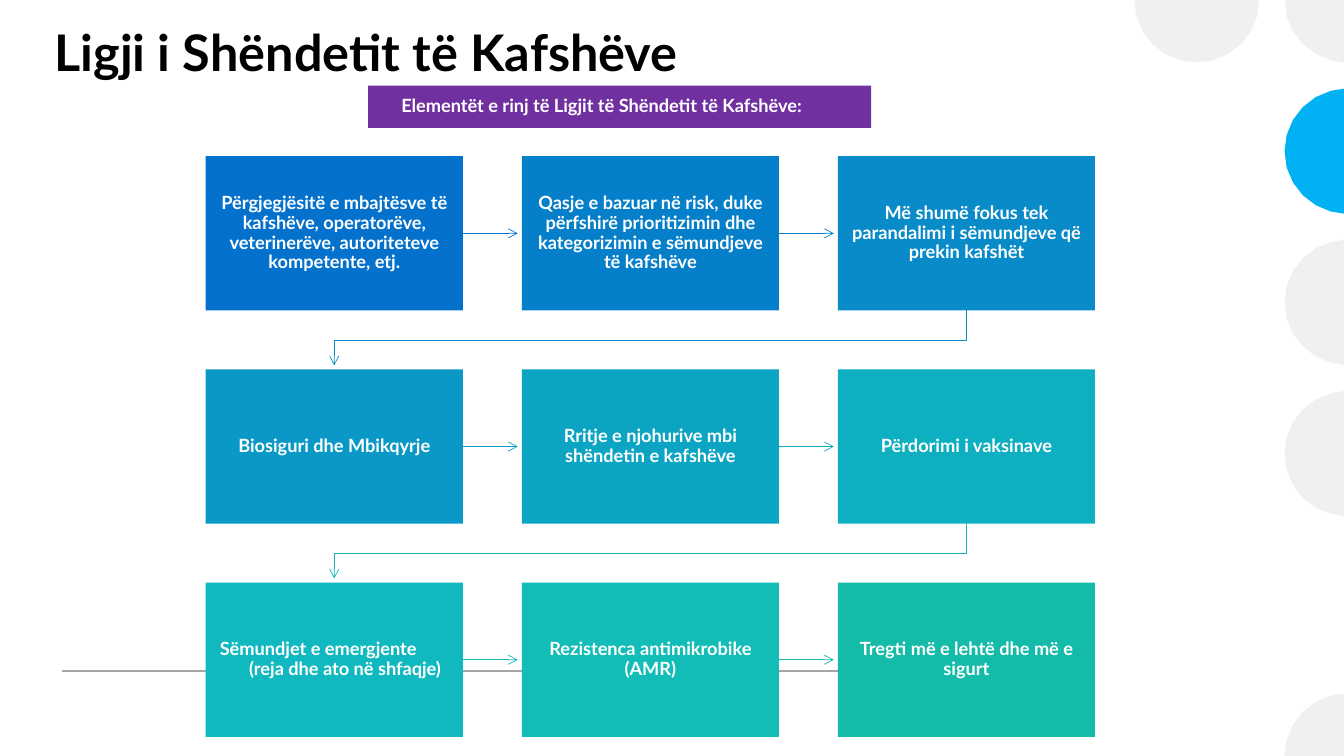
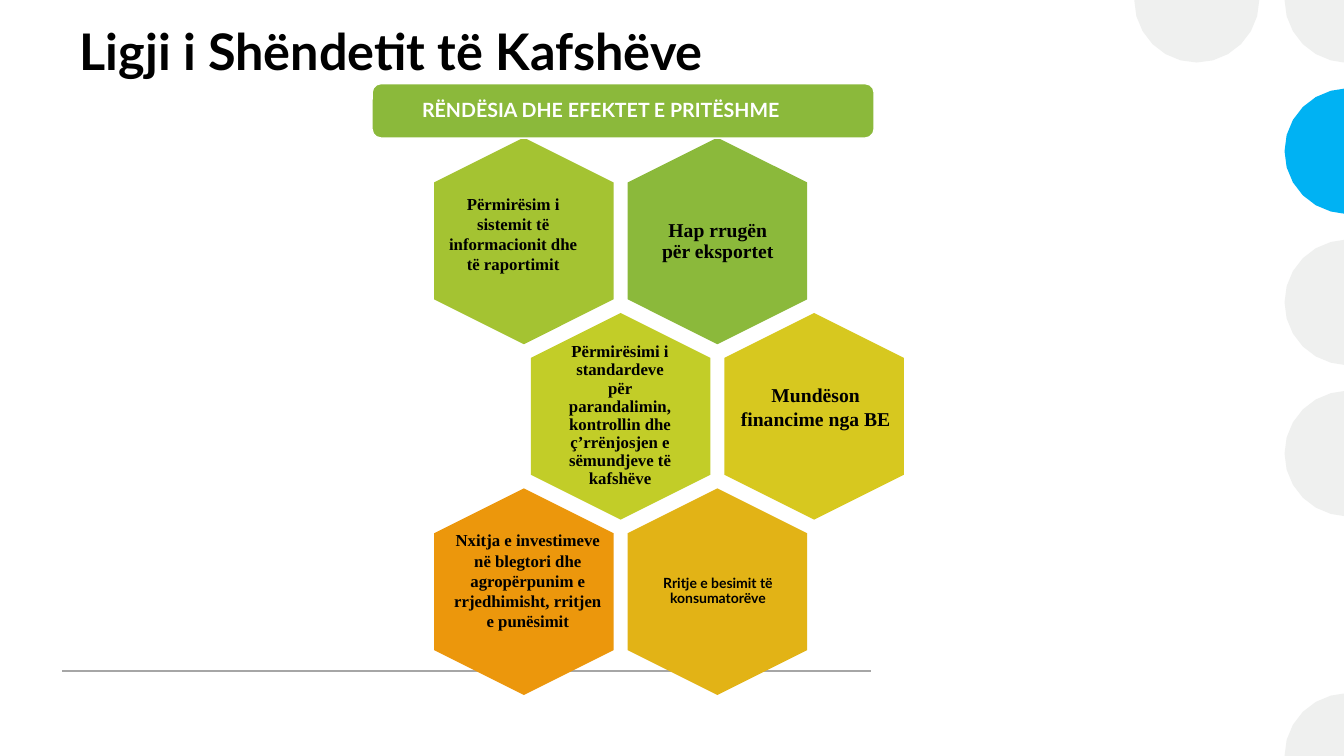
import math
from dataclasses import dataclass
from typing import Any

from lxml import etree
from pptx import Presentation
from pptx import util as u
from pptx.dml.color import RGBColor
from pptx.enum import shapes, text
from pptx.oxml.ns import qn

WHITE = RGBColor(0xFF, 0xFF, 0xFF)
BLACK = RGBColor(0x00, 0x00, 0x00)
GREY = RGBColor(0xEF, 0xF0, 0xEF)
SKY = RGBColor(0x00, 0xB2, 0xF3)
RULE_GREY = RGBColor(0xA6, 0xA6, 0xA6)
PURPLE = RGBColor(0x70, 0x30, 0xA0)
GREEN = RGBColor(0x8B, 0xB9, 0x3B)

WIDTH, HEIGHT = 13.33, 7.5
SANS, SERIF = "Lato", "Times New Roman"
TITLE = "Ligji i Shëndetit të Kafshëve"

# Flow grid: three columns and three rows, equal gaps both ways
COLUMNS = 3
FLOW_LEFT, FLOW_TOP, FLOW_WIDTH = 2.04, 1.55, 8.82
STEP_WIDTH, STEP_HEIGHT = 2.55, 1.53
GAP = (FLOW_WIDTH - COLUMNS * STEP_WIDTH) / (COLUMNS - 1)
ARROW_STOP = 0.04

# Honeycomb: columns are counted in half-cell steps
HEX_LEFT, HEX_TOP = 4.17, 1.5
HEX_LENGTH, HEX_BREADTH = 2.05, 1.78
HALF_CELL, HEX_ROW = 0.96, 1.74

# Edge discs
RADIUS, ARC_STEP = 0.62, 15

Box = tuple[float, float, float, float]


@dataclass(frozen=True)
class Disc:
    """Part of a disc, from one angle to another, clockwise from the right."""
    x: float
    y: float
    start: int
    end: int
    color: RGBColor = GREY


@dataclass(frozen=True)
class Step:
    text: str
    fill: str
    arrow: str = ""
    hanging: bool = False


@dataclass(frozen=True)
class Cell:
    text: str
    fill: str
    column: int
    row: int
    label: Box
    size: int
    font: str = SERIF
    inset: float = 0.05
    fitted: bool = True  # centred in the cell with tight lines


DISCS = [
    Disc(11.87, 0, 0, 180),
    Disc(13.36, 0, 90, 180),
    Disc(13.36, 1.5, 90, 270, SKY),
    Disc(13.36, 3, 90, 270),
    Disc(13.36, 4.5, 90, 270),
    Disc(13.36, 7.5, 180, 270),
]

STEPS = [
    Step("Përgjegjësitë e mbajtësve të kafshëve, operatorëve, veterinerëve, "
         "autoriteteve kompetente, etj.", "0471CC", "0471CC"),
    Step("Qasje e bazuar në risk, duke përfshirë prioritizimin dhe "
         "kategorizimin e sëmundjeve të kafshëve", "067FCA", "0680CA"),
    Step("Më shumë fokus tek parandalimi i sëmundjeve që prekin kafshët",
         "088BC8", "098FC7"),
    Step("Biosiguri dhe Mbikqyrje", "0A98C6", "0B9DC5"),
    Step("Rritje e njohurive mbi shëndetin e kafshëve", "0CA4C3", "0DAAC2"),
    Step("Përdorimi i vaksinave", "0EAFC1", "0FB6C0"),
    Step("Sëmundjet e emergjente (reja dhe ato në shfaqje)",
         "10B9BF", "12BDB9", hanging=True),
    Step("Rezistenca antimikrobike (AMR)", "12BDB7", "14BBA9"),
    Step("Tregti më e lehtë dhe më e sigurt", "14BBA9"),
]

CELLS = [
    Cell("Hap rrugën për eksportet", "8BB93B", 2, 0,
         (6.49, 1.69, 1.26, 1.41), 14),
    Cell("Përmirësim i sistemit të informacionit dhe të raportimit", "A4C332", 0, 0,
         (4.3, 1.87, 1.58, 0.91), 12, fitted=False),
    Cell("Përmirësimi i standardeve për parandalimin, kontrollin dhe "
         "ç’rrënjosjen e sëmundjeve të kafshëve", "C2CD28", 1, 1,
         (5.54, 3.42, 1.22, 1.41), 12),
    Cell("Mundëson financime nga BE", "D7C81F", 3, 1,
         (7.24, 3.75, 1.7, 0.57), 14, fitted=False),
    Cell("Rritje e besimit të konsumatorëve", "E2B316", 2, 2,
         (6.51, 5.16, 1.22, 1.41), 10, font=SANS, inset=0.04),
    Cell("Nxitja e investimeve në blegtori dhe agropërpunim e rrjedhimisht, "
         "rritjen e punësimit", "EC970C", 0, 2,
         (4.39, 5.21, 1.69, 1.41), 12, fitted=False),
]


def apply_format(target: Any, values: dict[str, Any]) -> None:
    for name, value in values.items():
        setattr(target, name, value)


def inches(*lengths: float) -> list[int]:
    return [u.Inches(length) for length in lengths]


def write(shape: Any, words: str, size: int, color: RGBColor, font: str = SANS,
          insets: Box = (0.1, 0.05, 0.1, 0.05), spacing: float = 0.9,
          align: Any = text.PP_ALIGN.CENTER, anchor: Any = text.MSO_ANCHOR.MIDDLE) -> Any:
    """Fill a shape with one bold paragraph and return the paragraph."""
    frame = shape.text_frame
    left, top, right, bottom = inches(*insets)
    apply_format(frame, {
        "word_wrap": True, "auto_size": text.MSO_AUTO_SIZE.NONE,
        "vertical_anchor": anchor, "margin_left": left, "margin_top": top,
        "margin_right": right, "margin_bottom": bottom,
    })
    paragraph = frame.paragraphs[0]
    apply_format(paragraph, {"alignment": align, "line_spacing": spacing})
    run = paragraph.add_run()
    run.text = words
    apply_format(run.font, {"name": font, "size": u.Pt(size), "bold": True})
    run.font.color.rgb = color
    return paragraph


def paint(shape: Any, fill: RGBColor) -> None:
    shape.shadow.inherit = False
    shape.fill.solid()
    shape.fill.fore_color.rgb = fill
    shape.line.fill.background()


def add_block(slide: Any, kind: Any, box: Box, fill: RGBColor) -> Any:
    shape = slide.shapes.add_shape(kind, *inches(*box))
    paint(shape, fill)
    return shape


def set_line(shape: Any, color: RGBColor, width: float, arrow: bool = False) -> None:
    shape.line.color.rgb = color
    shape.line.width = u.Pt(width)
    if arrow:
        outline = shape._element.spPr.find(qn("a:ln"))
        etree.SubElement(outline, qn("a:tailEnd"), type="arrow")


def add_line(slide: Any, start: tuple[float, float], end: tuple[float, float],
             color: RGBColor, width: float, arrow: bool = False) -> Any:
    line = slide.shapes.add_connector(
        shapes.MSO_CONNECTOR.STRAIGHT, *inches(*start, *end))
    set_line(line, color, width, arrow)
    etree.SubElement(line._element.spPr, qn("a:effectLst"))
    return line


def add_outline(slide: Any, points: list[tuple[float, float]], close: bool) -> Any:
    corners = [tuple(inches(*point)) for point in points]
    builder = slide.shapes.build_freeform(*corners[0])
    builder.add_line_segments(corners[1:], close=close)
    shape = builder.convert_to_shape()
    shape.shadow.inherit = False
    return shape


def add_disc(slide: Any, disc: Disc) -> None:
    """Draw the part of a disc that lies on the slide."""
    angles = [math.radians(a) for a in range(disc.start, disc.end + 1, ARC_STEP)]
    points = [(min(disc.x + RADIUS * math.cos(a), WIDTH), disc.y + RADIUS * math.sin(a))
              for a in angles]
    if disc.end - disc.start == 90:
        points.append((WIDTH, disc.y))
    paint(add_outline(slide, points, close=True), disc.color)


def add_base_slide(presentation: Any, title_box: Box) -> Any:
    """Add a slide with the shared title style, rule and discs."""
    slide = presentation.slides.add_slide(presentation.slide_layouts[5])
    title = slide.shapes.title
    left, top, width, height = inches(*title_box)
    apply_format(title, {"left": left, "top": top, "width": width, "height": height})
    write(title, TITLE, 36, BLACK, spacing=1.0,
          align=text.PP_ALIGN.LEFT, anchor=text.MSO_ANCHOR.TOP)
    add_line(slide, (0.62, 6.66), (8.64, 6.66), RULE_GREY, 1.25)
    for disc in DISCS:
        add_disc(slide, disc)
    return slide


def add_step(slide: Any, index: int, step: Step) -> None:
    row, column = divmod(index, COLUMNS)
    left = FLOW_LEFT + column * (STEP_WIDTH + GAP)
    top = FLOW_TOP + row * (STEP_HEIGHT + GAP)
    box = add_block(slide, shapes.MSO_SHAPE.RECTANGLE,
                    (left, top, STEP_WIDTH, STEP_HEIGHT), RGBColor.from_string(step.fill))
    align = text.PP_ALIGN.LEFT if step.hanging else text.PP_ALIGN.CENTER
    paragraph = write(box, step.text, 13, WHITE, insets=(0.12, 0.13, 0.12, 0.13), align=align)
    if step.hanging:
        properties = paragraph._p.get_or_add_pPr()
        properties.set("marL", str(u.Inches(0.31)))
        properties.set("indent", str(u.Inches(-0.29)))
    if not step.arrow:
        return
    color = RGBColor.from_string(step.arrow)
    if column < COLUMNS - 1:
        right, middle = left + STEP_WIDTH, top + STEP_HEIGHT / 2
        arrow = add_line(slide, (right, middle), (right + GAP - ARROW_STOP, middle),
                         color, 0.5, arrow=True)
        arrow.begin_connect(box, 3)
    else:
        # Turn back to the first column of the next row
        start_x, end_x = left + STEP_WIDTH / 2, FLOW_LEFT + STEP_WIDTH / 2
        bottom = top + STEP_HEIGHT
        bend = bottom + GAP / 2
        turn = add_outline(slide, [(start_x, bottom), (start_x, bend), (end_x, bend),
                                   (end_x, bottom + GAP - ARROW_STOP)], close=False)
        turn.fill.background()
        set_line(turn, color, 0.5, arrow=True)


def add_cell(slide: Any, cell: Cell) -> None:
    # The hexagon turns about its centre to stand on a point
    left = HEX_LEFT + cell.column * HALF_CELL
    top = HEX_TOP + cell.row * HEX_ROW
    hexagon = add_block(slide, shapes.MSO_SHAPE.HEXAGON,
                        (left, top, HEX_LENGTH, HEX_BREADTH), RGBColor.from_string(cell.fill))
    hexagon.rotation = 90
    label = slide.shapes.add_textbox(*inches(*cell.label))
    if cell.fitted:
        write(label, cell.text, cell.size, BLACK, cell.font, insets=(cell.inset,) * 4)
    else:
        write(label, cell.text, cell.size, BLACK, cell.font, spacing=1.0,
              anchor=text.MSO_ANCHOR.TOP)


def build_elements_slide(presentation: Any) -> None:
    slide = add_base_slide(presentation, (0.44, 0.16, 9.02, 0.62))
    for index, step in enumerate(STEPS):
        add_step(slide, index, step)
    banner = add_block(slide, shapes.MSO_SHAPE.RECTANGLE, (3.65, 0.85, 4.99, 0.42), PURPLE)
    write(banner, "Elementët e rinj të Ligjit të Shëndetit të Kafshëve:", 13, WHITE,
          insets=(0.33, 0.04, 0.04, 0.04), align=text.PP_ALIGN.LEFT)


def build_effects_slide(presentation: Any) -> None:
    slide = add_base_slide(presentation, (0.69, 0.15, 8.71, 0.54))
    for cell in CELLS:
        add_cell(slide, cell)
    banner = add_block(slide, shapes.MSO_SHAPE.ROUNDED_RECTANGLE,
                       (3.69, 0.83, 4.98, 0.54), GREEN)
    set_line(banner, WHITE, 1)
    write(banner, "RËNDËSIA DHE EFEKTET E PRITËSHME", 14, WHITE,
          insets=(0.47, 0.06, 0.06, 0.06), align=text.PP_ALIGN.LEFT)


def main() -> None:
    presentation = Presentation()
    presentation.slide_width = u.Inches(WIDTH)
    presentation.slide_height = u.Inches(HEIGHT)
    build_elements_slide(presentation)
    build_effects_slide(presentation)
    presentation.save("out.pptx")


if __name__ == "__main__":
    main()
